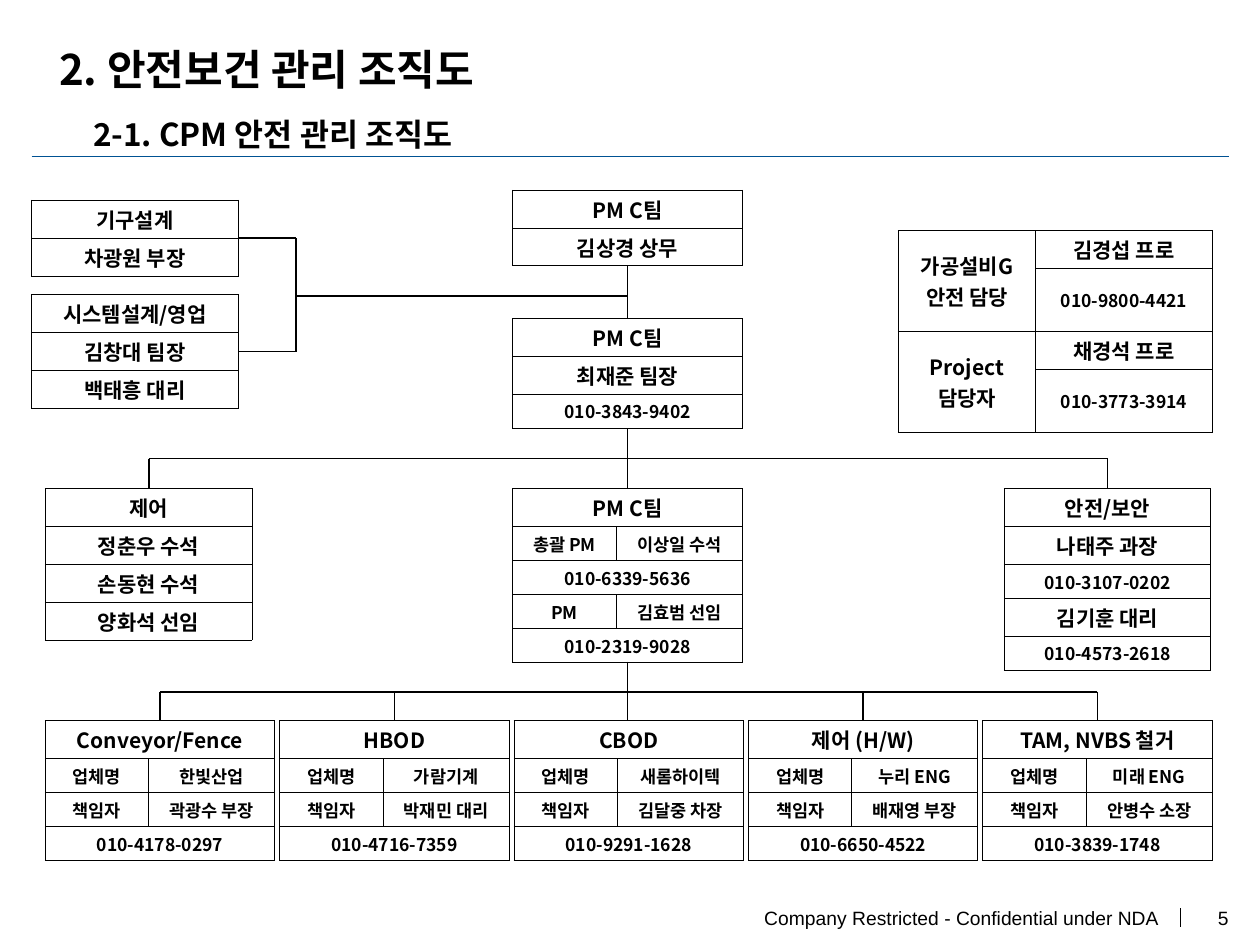
from lxml.etree import SubElement
from pptx import Presentation
from pptx.dml.color import RGBColor
from pptx.enum.shapes import MSO_CONNECTOR
from pptx.enum.text import MSO_ANCHOR, PP_ALIGN
from pptx.oxml import parse_xml
from pptx.oxml.ns import nsdecls, qn
from pptx.util import Inches, Pt

SANS = "Noto Sans CJK KR"
BLACK, BLUE = "000000", "005293"
HIGH = {12: 0.3, 10: 0.27}
ONE, WIDE, PAIR = (1.64,), (1.82,), (0.82, 1)

BOXES = [
    (0.25, 1.59, ONE, [(12, "기구설계"), (12, "차광원 부장")]),
    (0.25, 2.34, ONE, [(12, "시스템설계/영업"), (12, "김창대 팀장"), (12, "백태흥 대리")]),
    (4.07, 1.51, WIDE, [(12, "PM C팀"), (12, "김상경 상무")]),
    (4.07, 2.53, WIDE, [(12, "PM C팀"), (12, "최재준 팀장"), (10, "010-3843-9402")]),
    (7.13, 1.83, (1.09, 1.4), [
        (12, "가공설비G\n안전 담당", "김경섭 프로"), (10, None, "010-9800-4421"),
        (12, "Project\n담당자", "채경석 프로"), (10, None, "010-3773-3914")]),
    (0.36, 3.88, ONE, [
        (12, "제어"), (12, "정춘우 수석"), (12, "손동현 수석"), (12, "양화석 선임")]),
    (4.07, 3.88, PAIR, [
        (12, "PM C팀"), (10, "총괄 PM", "이상일 수석"), (10, "010-6339-5636"),
        (10, "PM", "김효범 선임"), (10, "010-2319-9028")]),
    (7.97, 3.88, ONE, [
        (12, "안전/보안"), (12, "나태주 과장"), (10, "010-3107-0202"),
        (12, "김기훈 대리"), (10, "010-4573-2618")]),
]
TEAMS = [
    ("Conveyor/Fence", "한빛산업", "곽광수 부장", "010-4178-0297"),
    ("HBOD", "가람기계", "박재민 대리", "010-4716-7359"),
    ("CBOD", "새롬하이텍", "김달중 차장", "010-9291-1628"),
    ("제어 (H/W)", "누리 ENG", "배재영 부장", "010-6650-4522"),
    ("TAM, NVBS 철거", "미래 ENG", "안병수 소장", "010-3839-1748"),
]
MID, LEFT, STEP, TEAM_TOP = 4.98, 0.36, 1.86, 5.72
STEMS = [LEFT + 0.91 + STEP * i for i in range(len(TEAMS))]
LINES = [
    (MID, 2.11, MID, 2.53), (MID, 3.4, MID, 3.88), (MID, 5.25, MID, TEAM_TOP),
    (1.89, 1.89, 2.35, 1.89), (1.89, 2.79, 2.35, 2.79),
    (2.35, 1.89, 2.35, 2.79), (2.35, 2.35, MID, 2.35),
    (1.18, 3.64, 8.79, 3.64), (1.18, 3.64, 1.18, 3.88), (8.79, 3.64, 8.79, 3.88),
    (STEMS[0], 5.49, STEMS[-1], 5.49),
] + [(x, 5.49, x, TEAM_TOP) for x in STEMS if abs(x - MID) > 0.1]


def paint(color, code):
    color.rgb = RGBColor.from_string(code)


def write(frame, text, size, align=PP_ALIGN.LEFT, font=SANS, bold=True):
    frame.word_wrap = True
    for i, line in enumerate(text.split("\n")):
        para = frame.paragraphs[0] if i == 0 else frame.add_paragraph()
        para.alignment = align
        run = para.add_run()
        run.text = line
        run.font.size, run.font.bold, run.font.name = Pt(size), bold, font
        paint(run.font.color, BLACK)
        SubElement(run.font._element, qn("a:ea")).set("typeface", font)


def label(slide, text, x, y, w, h, size, **look):
    box = slide.shapes.add_textbox(Inches(x), Inches(y), Inches(w), Inches(h))
    frame = box.text_frame
    frame.vertical_anchor = MSO_ANCHOR.MIDDLE
    write(frame, text, size, **look)
    return frame


def draw_line(slide, ends, color=BLACK, width=1):
    line = slide.shapes.add_connector(MSO_CONNECTOR.STRAIGHT, *map(Inches, ends))
    paint(line.line.color, color)
    line.line.width = Pt(width)
    SubElement(line._element.spPr, qn("a:effectLst"))


def frame_cell(cell):
    cell.fill.background()
    cell.vertical_anchor = MSO_ANCHOR.MIDDLE
    cell.margin_left = cell.margin_right = Inches(0.05)
    cell.margin_top = cell.margin_bottom = Inches(0.02)
    props = cell._tc.get_or_add_tcPr()
    for i, side in enumerate("LRTB"):
        props.insert(i, parse_xml(
            f'<a:ln{side} {nsdecls("a")} w="6350"><a:solidFill>'
            f'<a:srgbClr val="{BLACK}"/></a:solidFill></a:ln{side}>'))


def draw_box(slide, x, y, cols, rows):
    highs = [0.5 if None in row else HIGH[row[0]] for row in rows]
    shape = slide.shapes.add_table(
        len(rows), len(cols), Inches(x), Inches(y), Inches(sum(cols)), Inches(sum(highs)))
    table = shape.table
    table.first_row = table.horz_banding = False
    for col, width in zip(table.columns, cols):
        col.width = Inches(width)
    for r, (size, *texts) in enumerate(rows):
        table.rows[r].height = Inches(highs[r])
        for c in range(len(cols)):
            frame_cell(table.cell(r, c))
        if len(texts) < len(cols):
            table.cell(r, 0).merge(table.cell(r, len(cols) - 1))
        for c, text in enumerate(texts):
            if text is None:
                table.cell(r - 1, c).merge(table.cell(r, c))
            else:
                write(table.cell(r, c).text_frame, text, size, PP_ALIGN.CENTER)


def main():
    deck = Presentation()
    deck.slide_width, deck.slide_height = Inches(10), Inches(7.5)
    slide = deck.slides.add_slide(deck.slide_layouts[5])
    title = slide.shapes.title
    title.left, title.top = Inches(0.37), Inches(0.29)
    title.width, title.height = Inches(5.54), Inches(0.51)
    title.text_frame.vertical_anchor = MSO_ANCHOR.MIDDLE
    write(title.text_frame, "2. 안전보건 관리 조직도", 24)
    label(slide, "2-1. CPM 안전 관리 조직도", 0.64, 0.83, 4.35, 0.46, 18)
    draw_line(slide, (0.25, 1.24, 9.75, 1.24), BLUE, 0.75)

    for line in LINES:
        draw_line(slide, line)
    for box in BOXES:
        draw_box(slide, *box)
    for i, (name, firm, head, phone) in enumerate(TEAMS):
        draw_box(slide, LEFT + STEP * i, TEAM_TOP, PAIR, [
            (12, name), (10, "업체명", firm), (10, "책임자", head), (10, phone)])

    plain = dict(align=PP_ALIGN.RIGHT, font="Arial", bold=False)
    label(slide, "Company Restricted - Confidential under NDA",
          5.3, 7.04, 4, 0.49, 11, **plain)
    draw_line(slide, (9.37, 7.21, 9.37, 7.36))
    page = label(slide, "5", 9.24, 7.14, 0.51, 0.29, 11, **plain)
    page.margin_left = page.margin_right = 0
    deck.save("out.pptx")


if __name__ == "__main__":
    main()
